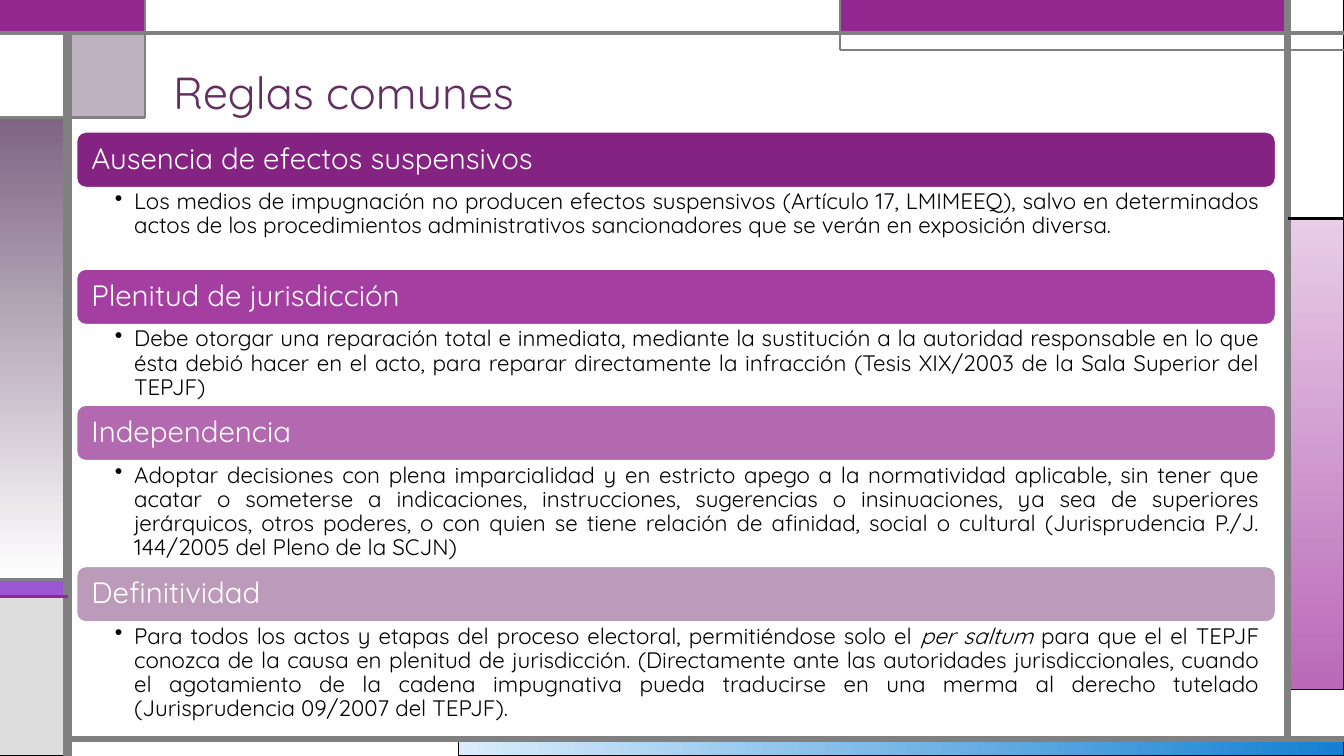
import pptx
import pptx.util
import pptx.dml.color
import pptx.enum.shapes
import pptx.enum.text
import pptx.oxml.ns
from lxml import etree

Inches = pptx.util.Inches
Pt = pptx.util.Pt
qn = pptx.oxml.ns.qn

# Content: heading, bar colour, body height, body runs as (text, italic)
TITLE = "Reglas comunes"
RULES = [
    ("Ausencia de efectos suspensivos", "852382", 0.81, [
        ("Los medios de impugnación no producen efectos suspensivos (Artículo 17, LMIMEEQ), salvo en "
         "determinados actos de los procedimientos administrativos sancionadores que se verán en "
         "exposición diversa.", False)]),
    ("Plenitud de jurisdicción", "A43EA1", 0.8, [
        ("Debe otorgar una reparación total e inmediata, mediante la sustitución a la autoridad "
         "responsable en lo que ésta debió hacer en el acto, para reparar directamente la infracción "
         "(Tesis XIX/2003 de la Sala Superior del TEPJF)", False)]),
    ("Independencia", "B369B0", 1.05, [
        ("Adoptar decisiones con plena imparcialidad y en estricto apego a la normatividad aplicable, "
         "sin tener que acatar o someterse a indicaciones, instrucciones, sugerencias o insinuaciones, "
         "ya sea de superiores jerárquicos, otros poderes, o con quien se tiene relación de afinidad, "
         "social o cultural (Jurisprudencia P./J. 144/2005 del Pleno de la SCJN)", False)]),
    ("Definitividad", "BC9ABA", 1.05, [
        ("Para todos los actos y etapas del proceso electoral, permitiéndose solo el ", False),
        ("per saltum", True),
        (" para que el el TEPJF conozca de la causa en plenitud de jurisdicción. (Directamente ante las "
         "autoridades jurisdiccionales, cuando el agotamiento de la cadena impugnativa pueda traducirse "
         "en una merma al derecho tutelado (Jurisprudencia 09/2007 del TEPJF). ", False)]),
]

THEME = {
    "font": "Quicksand", "title_size": 32, "heading_size": 21, "body_size": 16,
    "title": "632E62", "white": "FFFFFF", "black": "000000", "gray": "808080",
    "light": "DDDDDD", "purple": "92278F", "violet": "9B57D3", "indigo": "755DD9",
    "mauve": "7E6583", "sky": "DAEDFB", "blue": "1480D1", "pink": "E8CDE7", "orchid": "BA69B8",
}
WHITE, BLACK, GRAY, PURPLE = (THEME[name] for name in ("white", "black", "gray", "purple"))

# Grid lines of the frame
WIDTH, HEIGHT = 13.33, 7.5
LEFT, TAB, BANNER, RIGHT = 0.67, 1.44, 8.33, 12.77
TOP, LIP, CORNER, STRIPE, STRIPE_END, BOTTOM = 0.33, 0.5, 1.17, 5.75, 5.92, 7.33
PANEL, PANEL_END = 2.17, 6.84

# Frame panels: left, top, right, bottom, fill (one colour, or two plus angle), line, line width
PANELS = [
    (4.55, BOTTOM, WIDTH, HEIGHT, (THEME["sky"], THEME["blue"], 0), BLACK, 0.75),
    (RIGHT, PANEL, WIDTH, PANEL_END, (THEME["pink"], THEME["orchid"], 270), BLACK, 0.75),
    (0, STRIPE, LEFT, STRIPE_END, THEME["violet"], BLACK, 0.75),
    (0, STRIPE_END, LEFT, HEIGHT, THEME["light"], BLACK, 0.75),
    (RIGHT, 0, WIDTH, PANEL, WHITE, BLACK, 0.75),
    (BANNER, 0, RIGHT, TOP, PURPLE, THEME["indigo"], 0.75),
    (LEFT, TOP, TAB, CORNER, THEME["mauve"], BLACK, 0.75),
    (0, CORNER, LEFT, STRIPE, (THEME["mauve"], WHITE, 270), BLACK, 0.75),
    (0, TOP, LEFT, CORNER, WHITE, BLACK, 0.75),
    (0, 0, TAB, TOP, PURPLE, PURPLE, 1.5),
    (TAB, 0, BANNER, TOP, WHITE, GRAY, 0.75),
]
TRANSLUCENT_PANEL = 6

# Frame lines: from x, y, to x, y, colour, width
LINES = [
    (LEFT, HEIGHT, LEFT, TOP, GRAY, 6),
    (LEFT, BOTTOM, WIDTH, BOTTOM, GRAY, 4.5),
    (RIGHT, BOTTOM, RIGHT, 0, GRAY, 4.5),
    (0, TOP, WIDTH, TOP, GRAY, 3),
    (WIDTH, LIP, BANNER, LIP, GRAY, 1.5),
    (BANNER, LIP, BANNER, 0, GRAY, 1.5),
    (RIGHT, PANEL, WIDTH, PANEL, BLACK, 2.25),
    (TAB, 0, TAB, CORNER, GRAY, 1.5),
    (TAB, CORNER, 0, CORNER, GRAY, 2.25),
    (LEFT, STRIPE, 0, STRIPE, GRAY, 2.25),
    (LEFT, STRIPE_END, 0, STRIPE_END, PURPLE, 2.25),
]

RULE_LEFT, RULE_TOP, RULE_WIDTH, HEADING_HEIGHT = 0.76, 1.31, 11.89, 0.55


def rgb(value):
    return pptx.dml.color.RGBColor.from_string(value)


def add_block(slide, kind, box, fill, line, line_width):
    shape = slide.shapes.add_shape(kind, *map(Inches, box))
    shape.shadow.inherit = False
    if isinstance(fill, tuple):
        *colors, angle = fill
        shape.fill.gradient()
        shape.fill.gradient_angle = angle
        for position, (stop, color) in enumerate(zip(shape.fill.gradient_stops, colors)):
            stop.color.rgb = rgb(color)
            stop.position = position
    else:
        shape.fill.solid()
        shape.fill.fore_color.rgb = rgb(fill)
    shape.line.color.rgb = rgb(line)
    shape.line.width = Pt(line_width)
    return shape


def set_text(shape, runs, size, color, anchor, margins, align):
    frame = shape.text_frame
    frame.word_wrap = True
    frame.vertical_anchor = anchor
    frame.margin_left, frame.margin_top, frame.margin_right, frame.margin_bottom = map(Inches, margins)
    paragraph = frame.paragraphs[0]
    paragraph.alignment = align
    paragraph.line_spacing = 0.9
    for text, italic in runs:
        run = paragraph.add_run()
        run.text = text
        run.font.name = THEME["font"]
        run.font.size = Pt(size)
        run.font.italic = italic
        run.font.color.rgb = rgb(color)
    return paragraph


def add_bullet(paragraph, indent):
    properties = paragraph._p.get_or_add_pPr()
    properties.set("marL", str(Inches(indent)))
    properties.set("indent", str(-Inches(indent)))
    etree.SubElement(properties, qn("a:buChar")).set("char", "•")


def main():
    presentation = pptx.Presentation()
    presentation.slide_width, presentation.slide_height = Inches(WIDTH), Inches(HEIGHT)
    slide = presentation.slides.add_slide(presentation.slide_layouts[6])
    kinds = pptx.enum.shapes.MSO_SHAPE
    anchors = pptx.enum.text.MSO_ANCHOR
    aligns = pptx.enum.text.PP_ALIGN

    # Frame
    for index, (left, top, right, bottom, *style) in enumerate(PANELS):
        panel = add_block(slide, kinds.RECTANGLE, (left, top, right - left, bottom - top), *style)
        if index == TRANSLUCENT_PANEL:
            color = panel._element.spPr.find(qn("a:solidFill"))[0]
            etree.SubElement(color, qn("a:alpha")).set("val", "50000")
    for *ends, color, width in LINES:
        line = slide.shapes.add_connector(pptx.enum.shapes.MSO_CONNECTOR.STRAIGHT, *map(Inches, ends))
        line.line.color.rgb = rgb(color)
        line.line.width = Pt(width)
        etree.SubElement(line._element.spPr, qn("a:effectLst"))

    # Rules: coloured heading bar with a bulleted text below
    top = RULE_TOP
    for heading, color, body_height, runs in RULES:
        bar = add_block(slide, kinds.ROUNDED_RECTANGLE, (RULE_LEFT, top, RULE_WIDTH, HEADING_HEIGHT),
                        color, WHITE, 1)
        set_text(bar, [(heading, False)], THEME["heading_size"], WHITE, anchors.MIDDLE,
                 (0.12, 0.09, 0.12, 0.09), aligns.LEFT)
        top += HEADING_HEIGHT
        body = slide.shapes.add_textbox(*map(Inches, (RULE_LEFT, top, RULE_WIDTH, body_height)))
        paragraph = set_text(body, runs, THEME["body_size"], BLACK, anchors.TOP,
                             (0.38, 0.03, 0.16, 0.03), aligns.JUSTIFY)
        add_bullet(paragraph, 0.19)
        top += body_height

    # Title
    title = slide.shapes.add_textbox(*map(Inches, (1.62, 0.44, 10.5, 0.79)))
    set_text(title, [(TITLE, False)], THEME["title_size"], THEME["title"], anchors.BOTTOM,
             (0.1, 0.05, 0.1, 0.05), aligns.LEFT)

    presentation.save("out.pptx")


if __name__ == "__main__":
    main()
